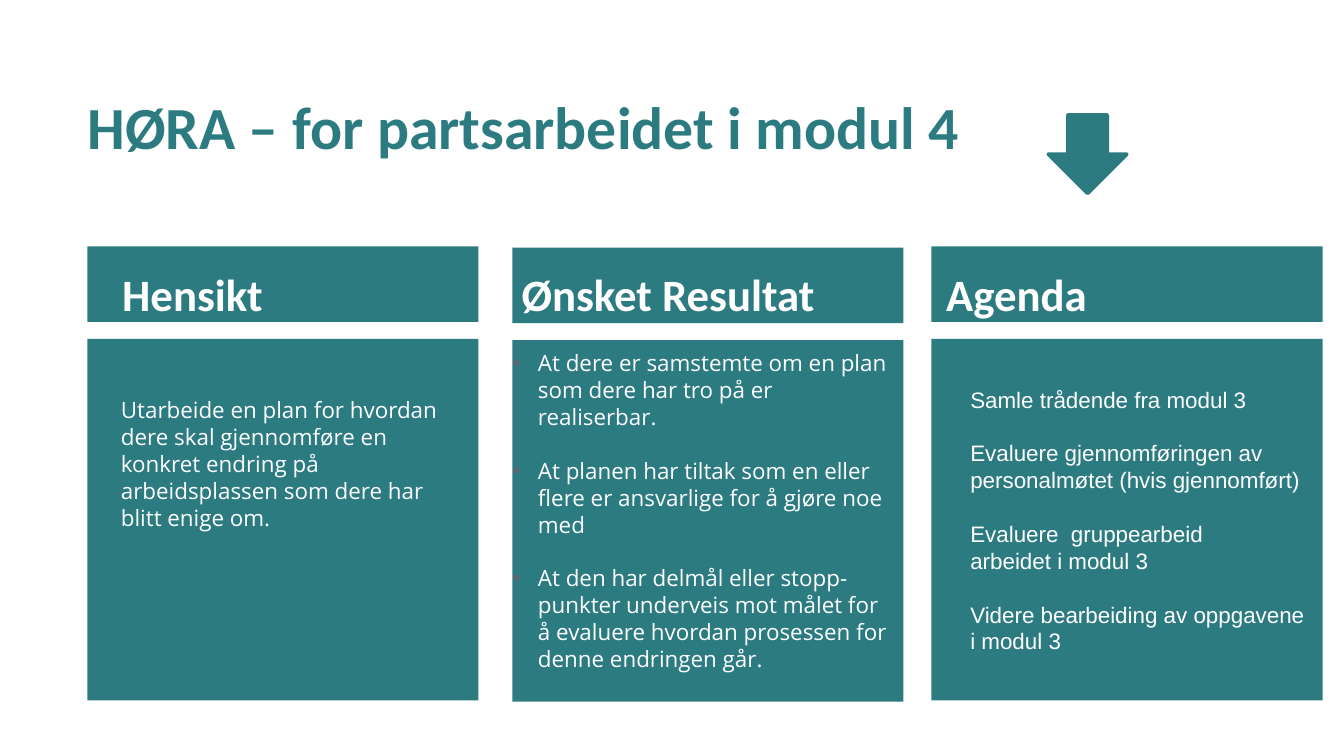
from lxml import etree
from pptx import Presentation
from pptx.dml.color import RGBColor
from pptx.enum.shapes import MSO_SHAPE as Shape
from pptx.enum.text import MSO_ANCHOR as Anchor, MSO_AUTO_SIZE as AutoSize, PP_ALIGN as Align
from pptx.oxml.ns import qn
from pptx.util import Pt

COLORS = {"teal": "2C7B81", "white": "FFFFFF", "bullet": "5B6670"}
LINE = 14.4  # height of a body line, also the gap between points
CARD_WIDTH, HEAD_HEIGHT, BODY_HEIGHT, BODY_OFFSET = 209.5, 40.5, 193.7, 49.5

# Each column: card left and top, heading box, body box, body style, points
COLUMNS = [
    {
        "card": (46.8, 132),
        "heading": ("Hensikt", (65.5, 136, 132.5, 35.4)),
        "box": (46.8, 212.4, 199.4, 72.7),
        "style": {"font": "Open Sans", "indent": 36, "first": -18, "gap": 0},
        "points": [
            ["Utarbeide en plan for hvordan", "dere skal gjennomføre en",
             "konkret endring på", "arbeidsplassen som dere har",
             "blitt enige om."],
        ],
    },
    {
        "card": (274.5, 132.7),
        "heading": ("Ønsket Resultat", (279.4, 129.6, 214.6, 41.8)),
        "box": (274.5, 187.2, 205.2, 216.7),
        "style": {"font": "Open Sans", "indent": 13.7, "first": -13.7,
                  "gap": LINE, "bullet": "•"},
        "points": [
            ["At dere er samstemte om en plan som dere har tro på er realiserbar."],
            ["At planen har tiltak som en eller flere er ansvarlige for å gjøre noe med"],
            ["At den har delmål eller stopp-punkter underveis mot målet for å "
             "evaluere hvordan prosessen for denne endringen går."],
        ],
    },
    {
        "card": (499, 132),
        "heading": ("Agenda", (506.9, 129.6, 132.5, 41.8)),
        "box": (501.8, 206.6, 198, 173.5),
        "style": {"font": "Arial", "indent": 18, "first": 0, "gap": LINE},
        "points": [
            ["Samle trådende fra modul 3"],
            ["Evaluere gjennomføringen av personalmøtet (hvis gjennomført)"],
            ["Evaluere  gruppearbeid", "arbeidet i modul 3"],
            ["Videre bearbeiding av oppgavene i modul 3"],
        ],
    },
]


def color(name):
    return RGBColor.from_string(COLORS[name])


def points(values):
    return [Pt(value) for value in values]


def add_shape(page, kind, area):
    shape = page.shapes.add_shape(kind, *points(area))
    shape.shadow.inherit = False
    shape.fill.solid()
    shape.fill.fore_color.rgb = color("teal")
    shape.line.fill.background()
    return shape


def set_frame(box, anchor=Anchor.TOP, top=0):
    frame = box.text_frame
    settings = {"word_wrap": True, "auto_size": AutoSize.NONE,
                "vertical_anchor": anchor, "margin_left": 0,
                "margin_right": 0, "margin_bottom": 0, "margin_top": Pt(top)}
    for name, value in settings.items():
        setattr(frame, name, value)
    return frame


def write(para, text, font, size, fill, bold=False, spacing=1.15):
    para.alignment = Align.LEFT
    para.line_spacing = spacing
    span = para.add_run()
    span.text = text
    for name, value in {"name": font, "size": Pt(size), "bold": bold}.items():
        setattr(span.font, name, value)
    span.font.color.rgb = color(fill)


def set_indent(para, style, bulleted):
    props = para._p.get_or_add_pPr()
    props.set("marL", str(Pt(style["indent"])))
    props.set("indent", str(Pt(style["first"])))
    if bulleted:
        bullet_color = etree.SubElement(props, qn("a:buClr"))
        etree.SubElement(bullet_color, qn("a:srgbClr"), val=COLORS["bullet"])
        etree.SubElement(props, qn("a:buFont"), typeface="Arial")
        etree.SubElement(props, qn("a:buChar"), char=style["bullet"])


def add_title(page):
    title = page.shapes.title
    area = {"left": 46.8, "top": 41.8, "width": 609, "height": 41.8}
    for name, value in area.items():
        setattr(title, name, Pt(value))
    frame = set_frame(title, top=0.7)
    write(frame.paragraphs[0], "HØRA – for partsarbeidet i modul 4",
          "Calibri", 32, "teal", bold=True)


def add_arrow(page):
    arrow = add_shape(page, Shape.RIGHT_ARROW, (561.6, 61.6, 42, 42))
    arrow.rotation = 90
    arrow.line.color.rgb = color("teal")
    arrow.line.width = Pt(2)
    etree.SubElement(arrow.line._get_or_add_ln(), qn("a:round"))


def add_heading(page, text, area):
    box = page.shapes.add_textbox(*points(area))
    frame = set_frame(box, Anchor.BOTTOM, 0.7)
    write(frame.paragraphs[0], text, "Calibri", 24, "white", bold=True)


def add_body(page, area, style, items):
    frame = set_frame(page.shapes.add_textbox(*points(area)))
    for number, lines in enumerate(items):
        for row, text in enumerate(lines):
            first = number == row == 0
            para = frame.paragraphs[0] if first else frame.add_paragraph()
            write(para, text, style["font"], 12, "white", spacing=Pt(LINE))
            if row == 0 and number:
                para.space_before = Pt(style["gap"])
            set_indent(para, style, "bullet" in style)


def add_column(page, column):
    left, top = column["card"]
    add_shape(page, Shape.RECTANGLE, (left, top, CARD_WIDTH, HEAD_HEIGHT))
    add_shape(page, Shape.RECTANGLE,
              (left, top + BODY_OFFSET, CARD_WIDTH, BODY_HEIGHT))
    add_heading(page, *column["heading"])
    add_body(page, column["box"], column["style"], column["points"])


def main():
    deck = Presentation()
    deck.slide_width, deck.slide_height = Pt(720), Pt(405)
    page = deck.slides.add_slide(deck.slide_layouts.get_by_name("Title Only"))
    # Title row
    add_title(page)
    add_arrow(page)
    # Three columns
    for column in COLUMNS:
        add_column(page, column)
    deck.save("out.pptx")


if __name__ == "__main__":
    main()
